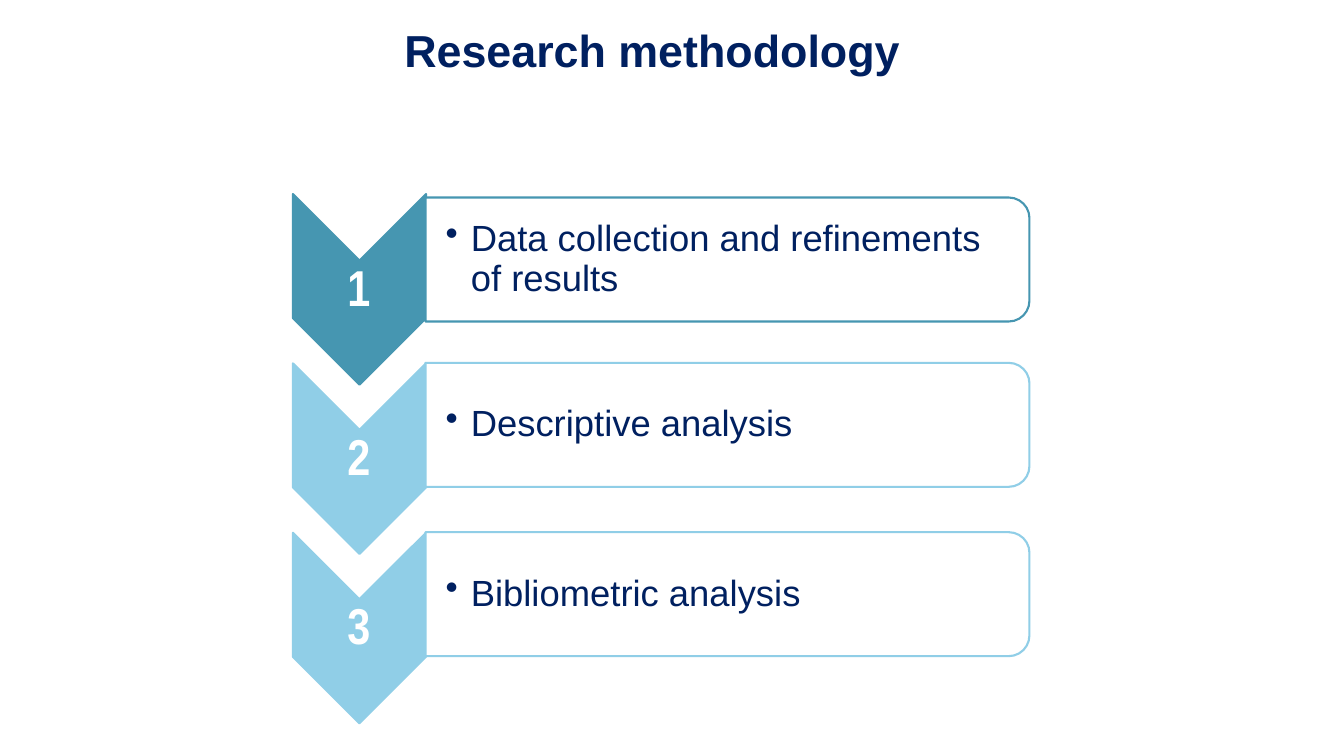
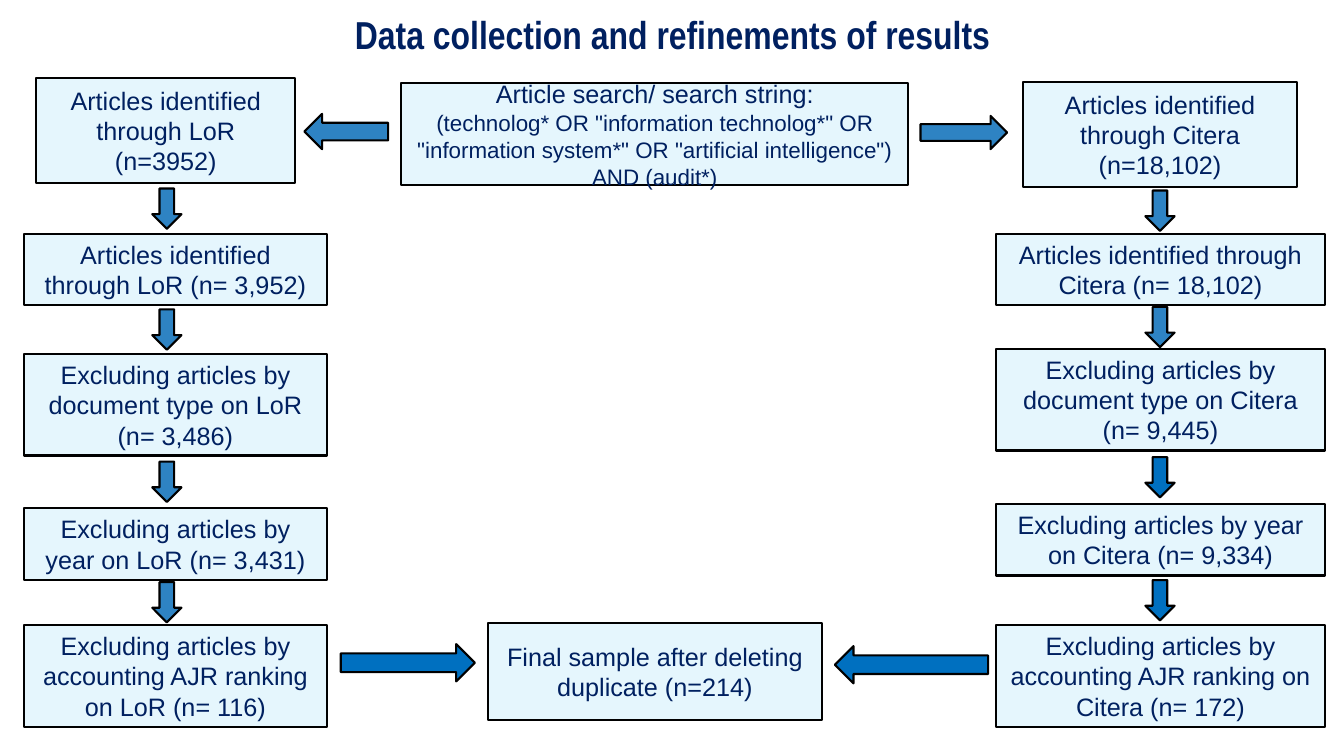
"""Build two slides on how the articles were found and sifted."""
from lxml import etree
from pptx import Presentation
from pptx import util as u
from pptx.dml.color import RGBColor
from pptx.enum import shapes, text

HUES = {
    "navy": "002060", "white": "FFFFFF", "black": "000000", "teal": "4696B1",
    "sky": "90CEE7", "pale": "E5F6FD", "blue": "2E83C3", "deep": "0070C0",
}
FONT, SLIM = "Arial", "Arial Narrow"
KIND = shapes.MSO_SHAPE


def hue(name):
    return RGBColor.from_string(HUES[name])


def style(para, size, tint="navy", font=FONT, bold=False, align=text.PP_ALIGN.CENTER):
    para.alignment = align
    for run in para.runs:
        run.font.size = u.Pt(size)
        run.font.name = font
        run.font.bold = bold
        run.font.color.rgb = hue(tint)


def shape(slide, kind, area, fill, line, turn=0):
    item = slide.shapes.add_shape(kind, *map(u.Inches, area))
    item.shadow.inherit = False
    item.rotation = turn
    item.fill.solid()
    item.fill.fore_color.rgb = hue(fill)
    item.line.color.rgb = hue(line)
    item.line.width = u.Pt(1.5)
    return item


def label(slide, area, words, pads, anchor=text.MSO_ANCHOR.MIDDLE):
    frame = slide.shapes.add_textbox(*map(u.Inches, area)).text_frame
    frame.word_wrap = True
    frame.vertical_anchor = anchor
    (frame.margin_left, frame.margin_top,
     frame.margin_right, frame.margin_bottom) = map(u.Inches, pads)
    frame.text = words
    return frame.paragraphs[0]


def title(slide, area, words, size, font):
    para = label(slide, area, words, (0.1, 0.05, 0.1, 0.05), text.MSO_ANCHOR.TOP)
    style(para, size, font=font, bold=True)


def bullet(para, indent):
    props = para._p.get_or_add_pPr()
    props.set("marL", str(u.Inches(indent)))
    props.set("indent", str(-u.Inches(indent)))
    space = "{http://schemas.openxmlformats.org/drawingml/2006/main}"
    etree.SubElement(props, space + "buChar").set("char", "•")


def step(slide, index, words, tint, drop):
    top = 2.21 + 1.68 * index
    shape(slide, KIND.CHEVRON, (2.62, top, 1.89, 1.32), tint, tint, 90)
    count = label(slide, (2.9, top + 0.38, 1.32, 0.57), str(index + 1), (0.03,) * 4)
    count.line_spacing = 0.9
    style(count, 36, "white", SLIM, True)
    level = top - 0.99 + drop
    shape(slide, KIND.ROUND_2_SAME_RECTANGLE, (6.6, level - 1.68, 1.23, 5.99),
          "white", tint, 90)
    para = label(slide, (4.22, level + 0.76, 5.93, 1.11), words, (0.2, 0.02, 0.02, 0.02))
    para.line_spacing = 0.9
    style(para, 26, align=text.PP_ALIGN.LEFT)
    bullet(para, 0.25)


def box(slide, area, words, sizes=(18, 18)):
    frame = shape(slide, KIND.RECTANGLE, area, "pale", "black").text_frame
    frame.word_wrap = True
    frame.text = words
    for para, size in zip(frame.paragraphs, sizes):
        style(para, size)


def arrow(slide, kind, area, fill):
    shape(slide, kind, area, fill, "black")


def column(slide, head, left, width, mid, tops, notes, fills):
    highs = (1.05, 0.71, 1.01, 0.71, 1.01)
    for index, (top, high, note) in enumerate(zip(tops, highs, notes)):
        side, span = (left, width) if index else head
        box(slide, (side, top, span, high), note)
    for top, high, below, fill in zip(tops, highs, tops[1:], fills):
        level = (top + high + below) / 2 - 0.2
        arrow(slide, KIND.DOWN_ARROW, (mid - 0.15, level, 0.29, 0.4), fill)


def notes(base, counts):
    forms = (
        "Articles identified through {} (n={})",
        "Articles identified through {} (n= {})",
        "Excluding articles by document type on {}\n(n= {})",
        "Excluding articles by year on {} (n= {})",
        "Excluding articles by accounting AJR ranking on {} (n= {})",
    )
    return [form.format(base, count) for form, count in zip(forms, counts)]


def method(slide):
    title(slide, (0.4, 0.18, 12.14, 0.7), "Research methodology", 32, FONT)
    steps = (
        ("Data collection and refinements of results", "teal", 0.04),
        ("Descriptive analysis", "sky", 0),
        ("Bibliometric analysis", "sky", 0),
    )
    for index, (words, tint, drop) in enumerate(steps):
        step(slide, index, words, tint, drop)


def flow(slide):
    title(slide, (0.36, 0.06, 12.63, 0.56),
          "Data collection and refinements of results", 27.8, SLIM)
    box(slide, (3.98, 0.82, 5.03, 1.02),
        'Article search/ search string:\n(technolog* OR "information technolog*" OR '
        '"information system*" OR "artificial intelligence") AND (audit*)', (18, 16))
    column(slide, (0.36, 2.57), 0.24, 3, 1.66, (0.77, 2.32, 3.51, 5.04, 6.2),
           notes("LoR", ("3952", "3,952", "3,486", "3,431", "116")), ("blue",) * 4)
    column(slide, (10.15, 2.71), 9.88, 3.26, 11.51, (0.81, 2.32, 3.46, 5, 6.2),
           notes("Citera", ("18,102", "18,102", "9,445", "9,334", "172")),
           ("blue", "blue", "deep", "deep"))
    box(slide, (4.84, 6.18, 3.31, 0.96), "Final sample after deleting duplicate (n=214)")
    for kind, area, fill in (
        (KIND.LEFT_ARROW, (3.02, 1.13, 0.83, 0.35), "blue"),
        (KIND.RIGHT_ARROW, (9.13, 1.15, 0.86, 0.33), "blue"),
        (KIND.RIGHT_ARROW, (3.38, 6.39, 1.33, 0.37), "deep"),
        (KIND.LEFT_ARROW, (8.28, 6.41, 1.52, 0.37), "deep"),
    ):
        arrow(slide, kind, area, fill)


def main():
    deck = Presentation()
    deck.slide_width, deck.slide_height = u.Inches(13.33), u.Inches(7.5)
    for build in (method, flow):
        build(deck.slides.add_slide(deck.slide_layouts[6]))
    deck.save("out.pptx")


if __name__ == "__main__":
    main()
